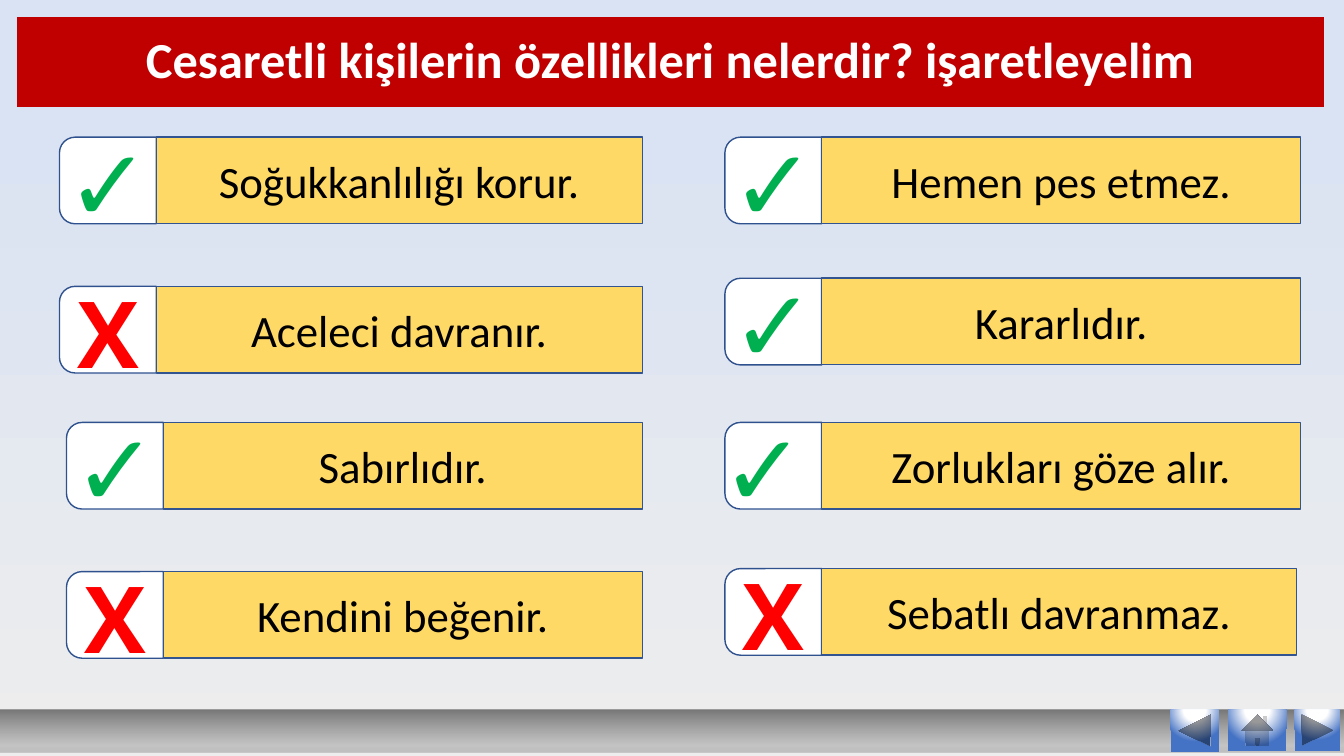
from lxml.etree import SubElement
from pptx import Presentation
from pptx.dml.color import RGBColor
from pptx.enum.shapes import MSO_SHAPE as SHP
from pptx.enum.text import MSO_ANCHOR, MSO_AUTO_SIZE, PP_ALIGN
from pptx.oxml.ns import qn
from pptx.util import Inches, Pt

COLORS = {
    "title": "C00000", "white": "FFFFFF", "black": "000000",
    "label": "FFD966", "label_line": "325491", "cell_line": "2F528F",
    "yes": "00B050", "no": "FF0000", "sky": "DAE3F3", "mist": "EDEDED",
    "silver": "C0C0C0", "gray": "B3B3B3", "dark": "777777", "blue": "4472C4",
}
CELL_W, ROW_H = 0.96, 0.86
MARKS = {
    "✓": dict(dx=-0.23, dy=-0.21, w=1.43, h=1.31, size=72,
              font="Roboto Slab", color="yes", wrap=True),
    "X": dict(dx=0.07, dy=-0.15, w=0.82, h=1.21, size=66,
              font="Open Sans", color="no", wrap=False),
}
ANSWERS = [
    (0.59, 1.36, 6.37, "✓", "Soğukkanlılığı korur.", 0),
    (0.59, 2.84, 6.37, "X", "Aceleci davranır.", 0),
    (0.66, 4.19, 6.37, "✓", "Sabırlıdır.", 0),
    (0.66, 5.67, 6.37, "X", "Kendini beğenir.", 0),
    (7.19, 1.36, 12.9, "✓", "Hemen pes etmez.", 0),
    (7.19, 2.76, 12.9, "✓", "Kararlıdır.", 0),
    (7.19, 4.19, 12.9, "✓", "Zorlukları göze alır.", -0.1),
    (7.19, 5.64, 12.86, "X", "Sebatlı davranmaz.", 0),
]
BUTTONS = [
    (SHP.ACTION_BUTTON_BACK_OR_PREVIOUS, 11.61, 0.48, 0.42),
    (SHP.ACTION_BUTTON_FORWARD_OR_NEXT, 12.84, 0.45, 0.41),
    (SHP.ACTION_BUTTON_HOME, 12.18, 0.58, 0.41),
]


def rgb(name):
    return RGBColor.from_string(COLORS[name])


def set_gradient(fill, element, stops, radial=False):
    fill.gradient()
    grad = element.find(".//" + qn("a:gradFill"))
    for child in list(grad):
        grad.remove(child)
    gs_lst = SubElement(grad, qn("a:gsLst"))
    for pos, color, alpha in stops:
        gs = SubElement(gs_lst, qn("a:gs"), pos=str(pos * 1000))
        clr = SubElement(gs, qn("a:srgbClr"), val=COLORS[color])
        if alpha < 100:
            SubElement(clr, qn("a:alpha"), val=str(alpha * 1000))
    if radial:
        circle = SubElement(grad, qn("a:path"), path="circle")
        SubElement(circle, qn("a:fillToRect"),
                   l="50000", t="-80000", r="50000", b="180000")
    else:
        SubElement(grad, qn("a:lin"), ang="16200000", scaled="0")


def add_box(shapes, kind, x, y, w, h, fill=None, line=None):
    sp = shapes.add_shape(kind, Inches(x), Inches(y), Inches(w), Inches(h))
    sp.shadow.inherit = False
    if fill:
        sp.fill.solid()
        sp.fill.fore_color.rgb = rgb(fill)
    if line:
        sp.line.color.rgb = rgb(line)
        sp.line.width = Pt(1)
    else:
        sp.line.fill.background()
    return sp


def write(tf, text, size, font, color, bold=False):
    p = tf.paragraphs[0]
    p.alignment = PP_ALIGN.CENTER
    r = p.add_run()
    r.text = text
    r.font.size = Pt(size)
    r.font.name = font
    r.font.bold = bold
    r.font.color.rgb = rgb(color)
    return p


def add_title(s, x, y, w, h):
    sp = s.shapes.title
    sp.left, sp.top, sp.width, sp.height = map(Inches, (x, y, w, h))
    sp.fill.solid()
    sp.fill.fore_color.rgb = rgb("title")
    tf = sp.text_frame
    tf.word_wrap = True
    tf.auto_size = MSO_AUTO_SIZE.NONE
    tf.vertical_anchor = MSO_ANCHOR.MIDDLE
    p = write(tf, "Cesaretli kişilerin özellikleri nelerdir? işaretleyelim",
              36, "Calibri", "white", True)
    p.line_spacing = 0.9


def add_answer(s, x, y, right, mark, text, nudge):
    grp = s.shapes.add_group_shape()
    inset = (CELL_W - ROW_H) / 2
    cell = add_box(grp.shapes, SHP.ROUND_2_SAME_RECTANGLE, x + inset, y - inset,
                   ROW_H, CELL_W, "white", "cell_line")
    cell.adjustments[0] = 0.18
    cell.rotation = 270
    label = add_box(grp.shapes, SHP.RECTANGLE, x + CELL_W, y,
                    right - x - CELL_W, ROW_H, "label", "label_line")
    label.text_frame.vertical_anchor = MSO_ANCHOR.MIDDLE
    write(label.text_frame, text, 32, "Calibri", "black")

    m = MARKS[mark]
    tb = s.shapes.add_textbox(Inches(x + m["dx"] + nudge), Inches(y + m["dy"]),
                              Inches(m["w"]), Inches(m["h"]))
    tf = tb.text_frame
    tf.word_wrap = m["wrap"]
    tf.auto_size = MSO_AUTO_SIZE.SHAPE_TO_FIT_TEXT
    write(tf, mark, m["size"], m["font"], m["color"], True)


def add_navigation(s, x, y, w, h):
    bar = add_box(s.shapes, SHP.RECTANGLE, x, y, w, h)
    set_gradient(bar.fill, bar._element,
                 [(0, "silver", 100), (17, "gray", 70), (100, "dark", 100)])
    for kind, left, width, height in BUTTONS:
        button = add_box(s.shapes, kind, x + left, y, width, height)
        set_gradient(button.fill, button._element,
                     [(0, "white", 100), (35, "white", 100), (100, "blue", 100)],
                     radial=True)


def main():
    prs = Presentation()
    prs.slide_width, prs.slide_height = Inches(13.33), Inches(7.5)
    s = prs.slides.add_slide(prs.slide_layouts[5])
    set_gradient(s.background.fill, s._element,
                 [(0, "mist", 100), (84, "sky", 100)])
    add_title(s, 0.17, 0.17, 12.96, 0.89)
    for answer in ANSWERS:
        add_answer(s, *answer)
    add_navigation(s, 0, 7.04, 13.33, 0.42)
    prs.save("out.pptx")


if __name__ == "__main__":
    main()
